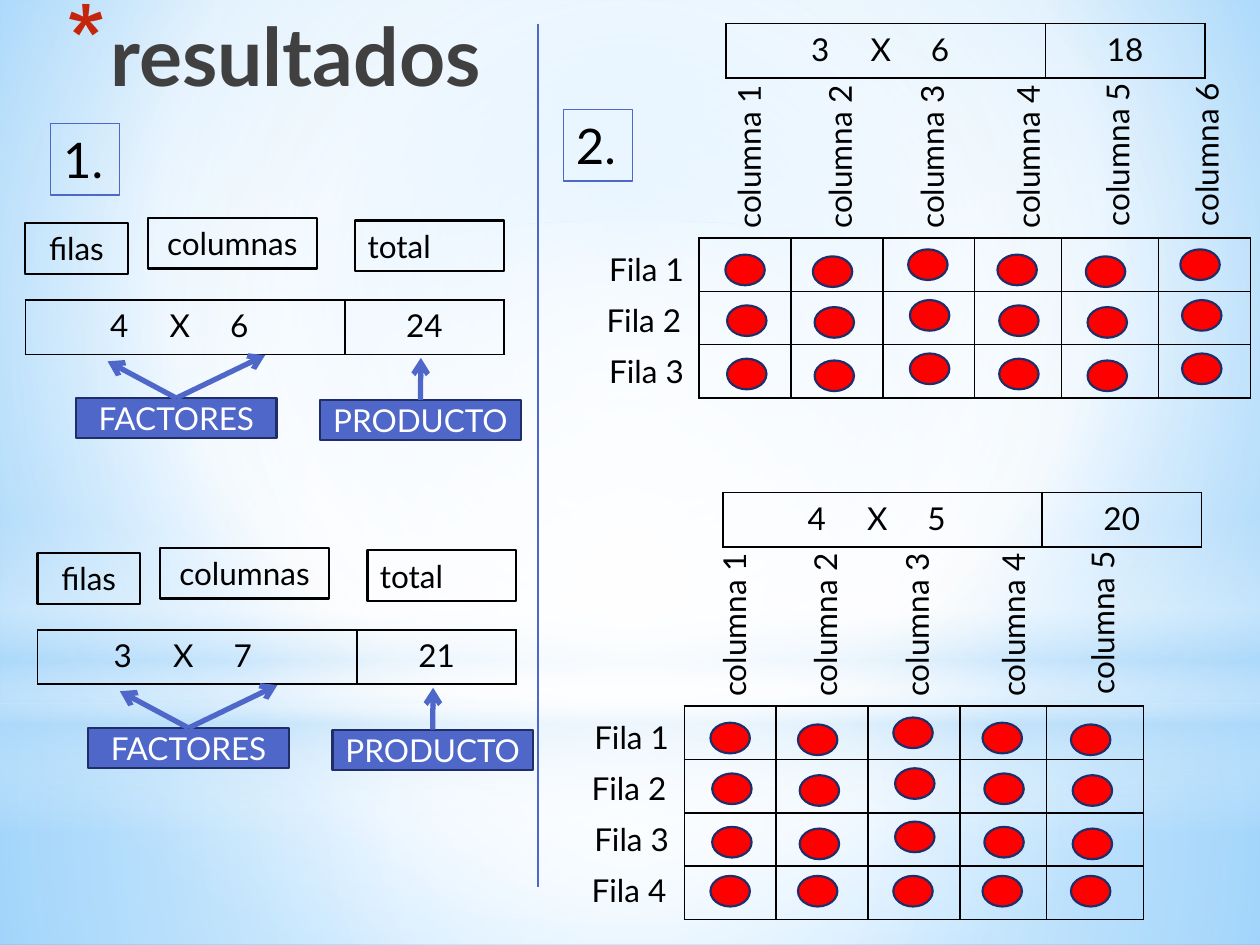
from dataclasses import dataclass

from lxml.etree import SubElement
from pptx import Presentation
from pptx.dml.color import RGBColor
from pptx.enum.shapes import MSO_CONNECTOR, MSO_SHAPE
from pptx.enum.text import MSO_ANCHOR, MSO_AUTO_SIZE, PP_ALIGN
from pptx.oxml import parse_xml
from pptx.oxml.ns import nsdecls, qn
from pptx.util import Pt


@dataclass(frozen=True)
class Theme:
    font: str = "Lato"
    ink: str = "000000"
    title: str = "404040"
    bullet: str = "C3260C"
    blue: str = "4E67C8"
    navy: str = "1F2E69"
    red: str = "FF0000"
    white: str = "FFFFFF"
    sky: str = "B4DCFA"
    glow: str = "9ED5FF"
    edge: str = "5BB9FF"
    body_size: float = 18
    number_size: float = 28
    title_size: float = 46


def rgb(color):
    return RGBColor.from_string(color)


def gradient(stops, center=None):
    """Circular gradient around center (l, t, r, b), or top to bottom without it."""
    gs = "".join(
        f'<a:gs pos="{pos * 1000}"><a:srgbClr val="{color}">'
        f'<a:alpha val="{alpha * 1000}"/></a:srgbClr></a:gs>'
        for pos, color, alpha in stops)
    if center:
        sides = " ".join(f'{k}="{v * 1000}"' for k, v in zip("ltrb", center))
        shade = f'<a:path path="circle"><a:fillToRect {sides}/></a:path>'
    else:
        shade = '<a:lin ang="5400000" scaled="0"/>'
    return parse_xml(f'<a:gradFill {nsdecls("a")} rotWithShape="1">'
                     f'<a:gsLst>{gs}</a:gsLst>{shade}</a:gradFill>')


class Deck:
    def __init__(self, theme):
        self.theme = theme
        self.prs = Presentation()
        self.prs.slide_width, self.prs.slide_height = Pt(720), Pt(540)
        self.s = self.prs.slides.add_slide(self.prs.slide_layouts[6])

    def background(self, stops, center):
        self.s.background.fill.solid()
        solid = self.s.element.find(".//" + qn("a:solidFill"))
        solid.getparent().replace(solid, gradient(stops, center))

    def style(self, tf, size=None, color=None, align=None, bold=False):
        for p in tf.paragraphs:
            p.alignment = align
            for r in p.runs:
                r.font.name = self.theme.font
                r.font.size = Pt(size or self.theme.body_size)
                r.font.color.rgb = rgb(color or self.theme.ink)
                r.font.bold = bold

    def shape(self, kind, box, fill=None, line=None, width=1.25):
        sp = self.s.shapes.add_shape(kind, *map(Pt, box))
        sp.shadow.inherit = False
        if fill:
            sp.fill.solid()
            sp.fill.fore_color.rgb = rgb(fill)
        else:
            sp.fill.background()
        if line:
            sp.line.color.rgb = rgb(line)
            sp.line.width = Pt(width)
        else:
            sp.line.fill.background()
        return sp

    def glow(self, kind, box, stops, center=None):
        sp = self.shape(kind, box, fill=self.theme.white)
        solid = sp.element.spPr.find(qn("a:solidFill"))
        solid.getparent().replace(solid, gradient(stops, center))

    def framed(self, text, box, align=None, line=None, width=1.25, size=None, wrap=True):
        sp = self.shape(MSO_SHAPE.RECTANGLE, box, line=line or self.theme.ink, width=width)
        tf = sp.text_frame
        tf.text = text
        tf.word_wrap = wrap
        tf.auto_size = MSO_AUTO_SIZE.SHAPE_TO_FIT_TEXT
        tf.vertical_anchor = MSO_ANCHOR.TOP
        self.style(tf, size, align=align or PP_ALIGN.LEFT)

    def tag(self, text, box):
        sp = self.shape(MSO_SHAPE.FLOWCHART_PROCESS, box, self.theme.blue, self.theme.navy)
        sp.text_frame.text = text
        sp.text_frame.vertical_anchor = MSO_ANCHOR.MIDDLE
        self.style(sp.text_frame, color=self.theme.white, align=PP_ALIGN.CENTER)
        return sp

    def label(self, text, box, rotation=0):
        sp = self.s.shapes.add_textbox(*map(Pt, box))
        sp.rotation = rotation
        tf = sp.text_frame
        tf.text = text
        tf.word_wrap = True
        tf.auto_size = MSO_AUTO_SIZE.SHAPE_TO_FIT_TEXT
        self.style(tf)

    def title(self, text, box):
        tf = self.s.shapes.add_textbox(*map(Pt, box)).text_frame
        tf.text = text
        tf.word_wrap = True
        self.style(tf, self.theme.title_size, self.theme.title, bold=True)
        pPr = tf.paragraphs[0]._p.get_or_add_pPr()
        pPr.set("marL", str(Pt(25)))
        pPr.set("indent", str(-Pt(25)))
        SubElement(SubElement(pPr, qn("a:buClr")), qn("a:srgbClr"), val=self.theme.bullet)
        SubElement(pPr, qn("a:buSzPct"), val="128000")
        SubElement(pPr, qn("a:buChar"), char="*")

    def line(self, start, end, width, start_shape=None, arrow=False):
        c = self.s.shapes.add_connector(MSO_CONNECTOR.STRAIGHT, *map(Pt, start + end))
        c.line.color.rgb = rgb(self.theme.blue)
        c.line.width = Pt(width)
        if start_shape:
            c.begin_connect(start_shape, 0)
        if arrow:
            SubElement(c.line._get_or_add_ln(), qn("a:tailEnd"), type="arrow")
        SubElement(c.element.spPr, qn("a:effectLst"))

    def table(self, x, y, widths, heights):
        frame = self.s.shapes.add_table(len(heights), len(widths), Pt(x), Pt(y),
                                        Pt(sum(widths)), Pt(sum(heights)))
        table = frame.table
        table.first_row = table.horz_banding = False
        for col, width in zip(table.columns, widths):
            col.width = Pt(width)
        for row, height in zip(table.rows, heights):
            row.height = Pt(height)
        for cell in table.iter_cells():
            cell.fill.background()
            tcPr = cell._tc.get_or_add_tcPr()
            for i, side in enumerate("LRTB"):
                tcPr.insert(i, parse_xml(
                    f'<a:ln{side} {nsdecls("a")} w="{Pt(1)}"><a:solidFill>'
                    f'<a:srgbClr val="{self.theme.ink}"/></a:solidFill></a:ln{side}>'))
        return table

    def product(self, x, y, a, b, inset=48.5):
        """Multiplication strip: the two factors and their product."""
        table = self.table(x, y, [182.5, 91], [31])
        factors, total = table.cell(0, 0), table.cell(0, 1)
        factors.margin_left = Pt(inset)
        factors.text_frame.text = f"{a}\tX\t{b}"
        total.text_frame.text = str(a * b)
        self.style(factors.text_frame)
        self.style(total.text_frame, align=PP_ALIGN.CENTER)
        tabs = SubElement(factors.text_frame.paragraphs[0]._p.get_or_add_pPr(), qn("a:tabLst"))
        for stop in (34, 68.5):
            SubElement(tabs, qn("a:tab"), pos=str(Pt(stop)), algn="l")

    def explained(self, x, y, a, b, inset):
        """Multiplication strip with its part names above and below."""
        self.framed("filas", (x, y - 44, 58.5, 29), PP_ALIGN.CENTER)
        self.framed("columnas", (x + 70, y - 47, 96.5, 29), PP_ALIGN.CENTER)
        self.framed("total", (x + 188.5, y - 45.5, 85, 29))
        self.product(x, y, a, b, inset)
        factors = self.tag("FACTORES", (x + 29, y + 56, 114.5, 23))
        result = self.tag("PRODUCTO", (x + 168.5, y + 57, 114.5, 23))
        for sp, dx, dy in ((factors, 47, 35), (factors, 137, 31.5), (result, 226, 33)):
            start = (x + 86, y + 56) if sp is factors else (x + 226, y + 57)
            self.line(start, (x + dx, y + dy), 3, sp, arrow=True)

    def array(self, x, y, rows, cols):
        """Grid with one dot per cell and named rows and columns."""
        self.table(x, y, [52.5, 52.5, 52.5, 49.5, 55.5, 52.5][:cols], [30.5] * rows)
        label_x = (-24, 28, 80.5, 135.5, 186.5, 237.5)
        dot_x = (15, 65, 119.5, 170.5, 221, 275)
        dot_y = (9.5, 10.5, 6.5) * 2
        # each row of dots: sideways shift, drop, least height within the row
        dot_rows = ((0, 0, 0), (1, 29, 0), (1, 59.5, 0), (0, 86.5, 10.5))
        for c in range(cols):
            rise = 65 if c < 4 else 66.5
            self.label(f"columna {c + 1}", (x + label_x[c], y - rise, 104.5, 29), 270)
            for shift, drop, least in dot_rows[:rows]:
                self.shape(MSO_SHAPE.OVAL, (x + dot_x[c] + shift, y + drop + max(dot_y[c], least),
                                            22.5, 17.5), self.theme.red, self.theme.navy)
        for r in range(rows):
            self.label(f"Fila {r + 1}", (x - 58.5 - 1.5 * (r % 2), y + 3.5 + 29 * r, 75.5, 29))


def main():
    t = Theme()
    d = Deck(t)
    middle = (50, 50, 50, 50)

    # Backdrop
    d.background([(0, t.glow, 100), (60, t.white, 100), (100, t.edge, 100)], (20, 10, 20, 60))
    d.glow(MSO_SHAPE.RECTANGLE, (0, 402, 720, 138),
           [(0, t.white, 91), (37, t.white, 76), (100, t.sky, 79)], middle)
    d.glow(MSO_SHAPE.RECTANGLE, (0, 0, 720, 402),
           [(0, t.white, 89), (48, t.white, 62), (100, t.sky, 79)], middle)
    d.glow(MSO_SHAPE.RECTANGLE, (0, 296.5, 720, 180),
           [(0, t.white, 0), (29, t.white, 30), (45, t.sky, 40),
            (55, t.white, 26), (65, t.sky, 60), (100, t.white, 0)])
    d.glow(MSO_SHAPE.OVAL, (0, 126, 720, 402), [(0, t.white, 100), (56, t.white, 0)], middle)

    # Title, section numbers and divider
    d.title("resultados", (31, 0, 543.5, 90))
    for text, x, y in (("1.", 29, 70.5), ("2.", 322, 62.5)):
        d.framed(text, (x, y, 39.5, 41), line=t.blue, width=0.75, size=t.number_size, wrap=False)
    d.line((307.5, 13.5), (307.5, 507), 0.75)

    # Left: multiplications with their parts named
    d.explained(14.5, 171.5, 4, 6, 48.5)
    d.explained(21.5, 360, 3, 7, 43.5)

    # Right: multiplications shown as rows and columns
    d.product(415, 13.5, 3, 6)
    d.array(399.5, 136, 3, 6)
    d.product(413, 281.5, 4, 5)
    d.array(391, 403.5, 4, 5)

    d.prs.save("out.pptx")


if __name__ == "__main__":
    main()
